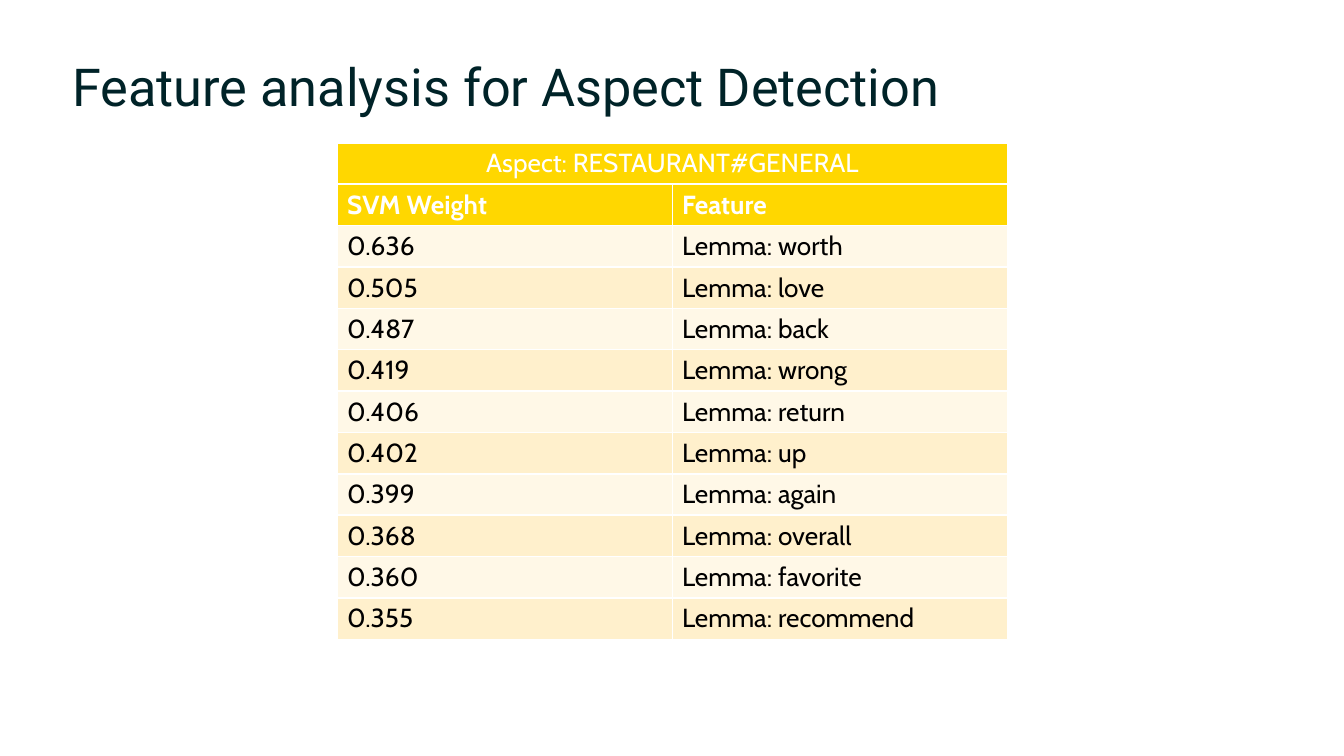
import pptx
import pptx.dml.color
import pptx.enum.text
import pptx.oxml
import pptx.oxml.ns
import pptx.util
from pptx.util import Cm, Pt

COLORS = {
    "title": "002328",
    "header": "FFD700",
    "light": "FFF8E7",
    "dark": "FFF0CC",
    "white": "FFFFFF",
    "text": "000000",
}
FEATURES = [
    ("0.636", "worth"),
    ("0.505", "love"),
    ("0.487", "back"),
    ("0.419", "wrong"),
    ("0.406", "return"),
    ("0.402", "up"),
    ("0.399", "again"),
    ("0.368", "overall"),
    ("0.360", "favorite"),
    ("0.355", "recommend"),
]


def rgb(name):
    return pptx.dml.color.RGBColor.from_string(COLORS[name])


def add_run(p, text, font, size, color, bold=False):
    r = p.add_run()
    r.text = text
    r.font.name = font
    r.font.size = Pt(size)
    r.font.bold = bold
    r.font.color.rgb = rgb(color)


def add_borders(cell):
    tc_pr = cell._tc.get_or_add_tcPr()
    for side in ("lnL", "lnR", "lnT", "lnB"):
        tc_pr.append(pptx.oxml.parse_xml(
            f'<a:{side} {pptx.oxml.ns.nsdecls("a")} w="{Pt(1)}"><a:solidFill>'
            f'<a:srgbClr val="{COLORS["white"]}"/></a:solidFill></a:{side}>'))


def format_cell(cell, fill):
    add_borders(cell)
    cell.fill.solid()
    cell.fill.fore_color.rgb = rgb(fill)
    cell.margin_left = cell.margin_right = Cm(0.18)
    cell.margin_top = cell.margin_bottom = Cm(0.09)


def place_title(s, left, top, width, height):
    sp = s.shapes.title
    sp.left, sp.top, sp.width, sp.height = left, top, width, height
    tf = sp.text_frame
    tf.word_wrap = True
    tf.auto_size = pptx.enum.text.MSO_AUTO_SIZE.NONE
    tf.vertical_anchor = pptx.enum.text.MSO_ANCHOR.TOP
    tf.margin_left = tf.margin_right = tf.margin_top = tf.margin_bottom = 0
    p = tf.paragraphs[0]
    p.alignment = pptx.enum.text.PP_ALIGN.LEFT
    p.line_spacing = Pt(32)
    add_run(p, "Feature analysis for Aspect Detection", "Roboto", 28, "title")


def place_feature_table(s, left, top, width, row_height):
    rows = [("Aspect: RESTAURANT#GENERAL", ""), ("SVM Weight", "Feature")]
    rows += [(weight, f"Lemma: {lemma}") for weight, lemma in FEATURES]
    table = s.shapes.add_table(len(rows), 2, left, top, width,
                               row_height * len(rows)).table

    for i, row in enumerate(rows):
        table.rows[i].height = row_height
        header = i < 2
        fill = "header" if header else ("light", "dark")[i % 2]
        for j, text in enumerate(row):
            cell = table.cell(i, j)
            format_cell(cell, fill)
            if text:
                add_run(cell.text_frame.paragraphs[0], text, "Cabin", 14,
                        "white" if header else "text", bold=i == 1)

    # Aspect name spans both columns
    aspect = table.cell(0, 0)
    aspect.merge(table.cell(0, 1))
    aspect.text_frame.paragraphs[0].alignment = pptx.enum.text.PP_ALIGN.CENTER


def main():
    prs = pptx.Presentation()
    prs.slide_width, prs.slide_height = Cm(25.4), Cm(14.29)
    s = prs.slides.add_slide(prs.slide_layouts[5])
    s.background.fill.solid()
    s.background.fill.fore_color.rgb = rgb("white")
    place_title(s, Cm(1.37), Cm(1.09), Cm(22.7), Cm(1.6))
    place_feature_table(s, Cm(6.38), Cm(2.7), Cm(12.66), Cm(0.78))
    prs.save("out.pptx")


if __name__ == "__main__":
    main()
